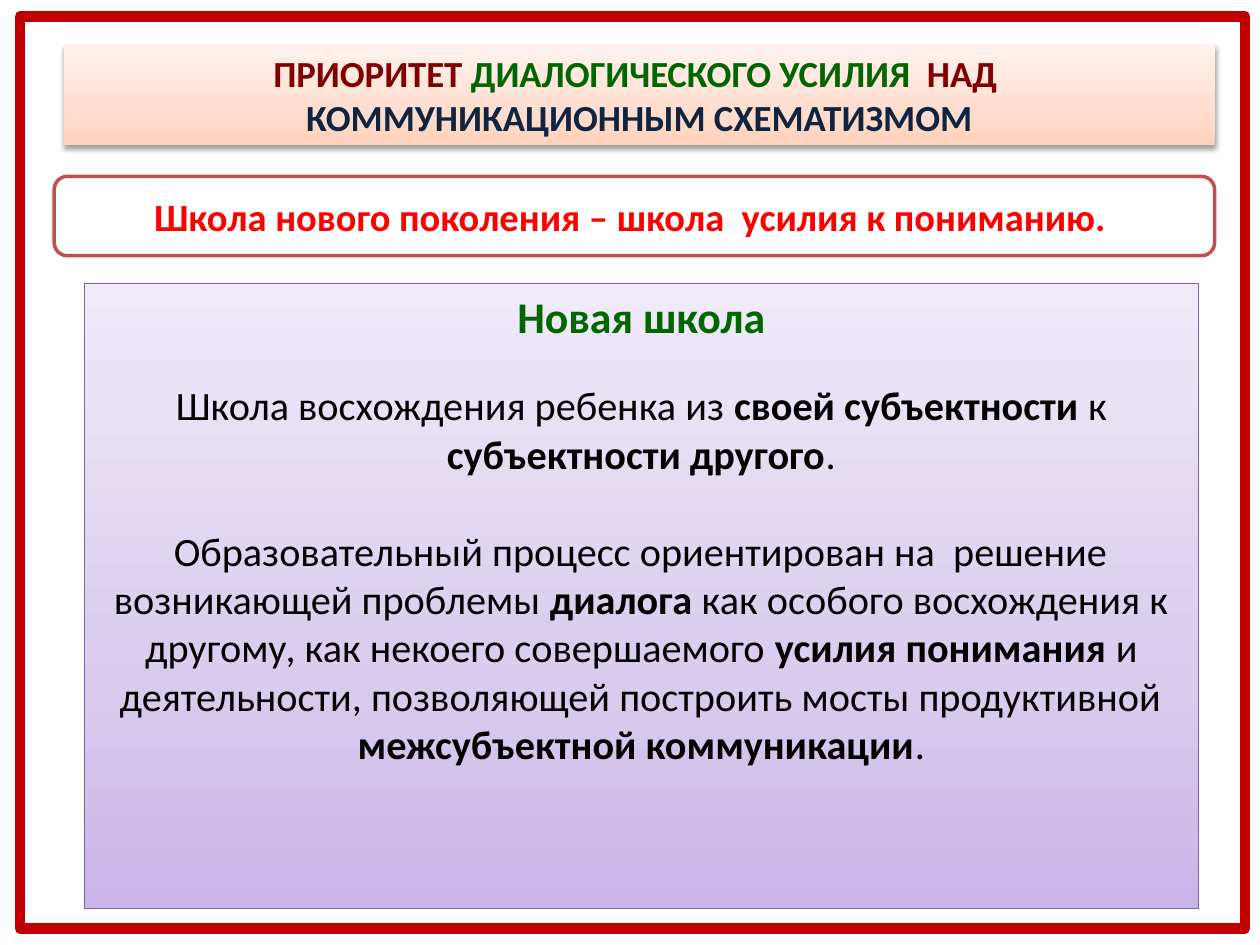
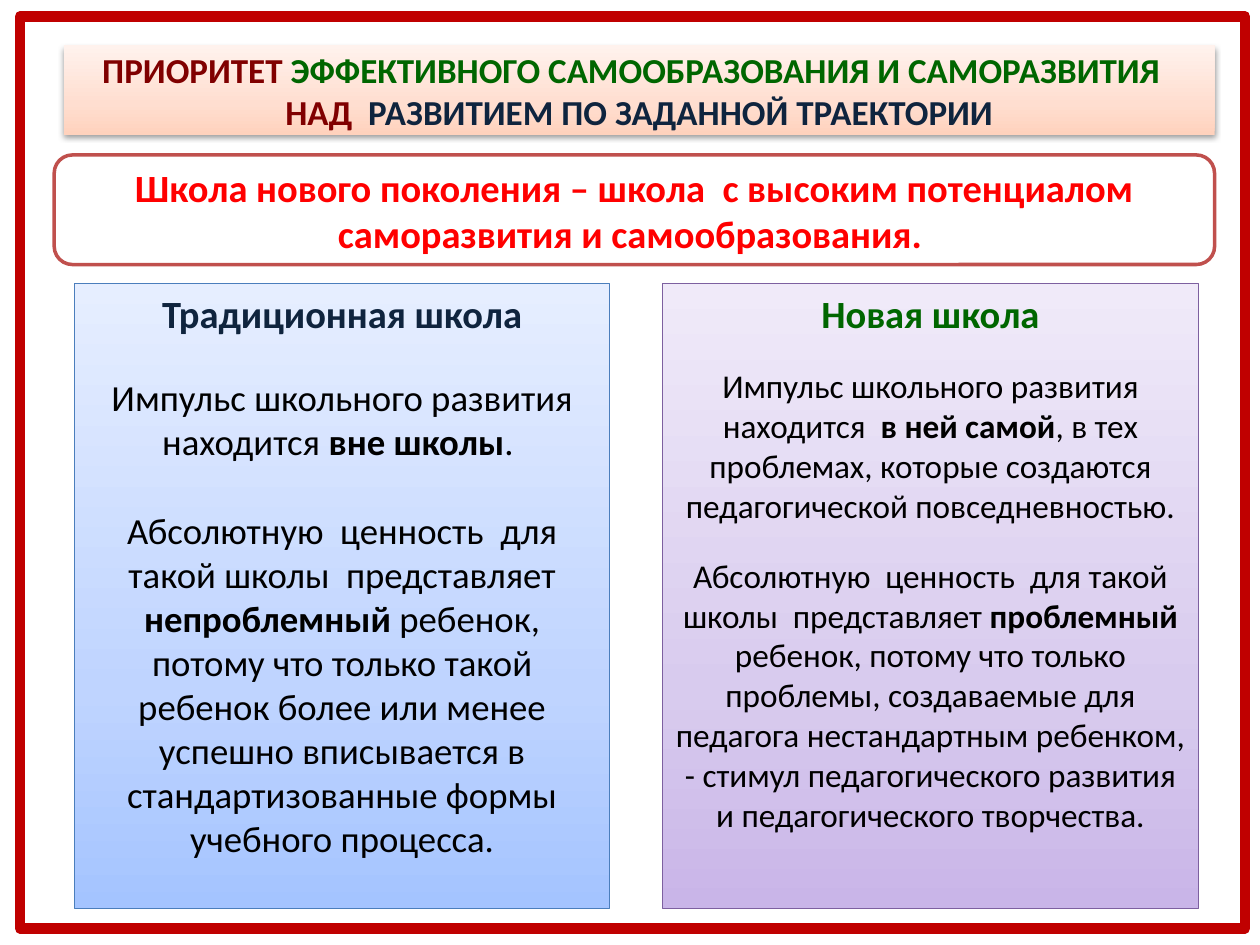
from copy import deepcopy

from lxml.etree import SubElement
from pptx import Presentation
from pptx.dml.color import RGBColor
from pptx.enum.shapes import MSO_SHAPE
from pptx.enum.text import MSO_ANCHOR, PP_ALIGN
from pptx.oxml.ns import qn
from pptx.util import Inches, Pt

FONT = "Calibri"
COLORS = {
    "frame": "C00000", "white": "FFFFFF", "black": "000000",
    "maroon": "800000", "green": "006600", "navy": "0F243E",
    "red": "FF0000", "brick": "C0504D", "violet": "7D60A0", "blue": "4B7EBC",
}
# Gradient colours from the bottom edge to the top one
FADES = {
    "peach": ("FFD2BD", "FFDED0", "FFF2ED"),
    "violet": ("C9B5E8", "D8CBEE", "F0EAF9"),
    "blue": ("A4C4FF", "BFD4FF", "E6EEFF"),
}
STOPS = (0, 0.35, 1)
PANEL_TOP, PANEL_HEIGHT = 2.25, 4.96


def rgb(name):
    return RGBColor.from_string(COLORS[name])


def add_box(slide, box, kind=MSO_SHAPE.RECTANGLE, line=None, width=0.75):
    shape = slide.shapes.add_shape(kind, *map(Inches, box))
    shape.shadow.inherit = False
    shape.fill.background()
    if line:
        shape.line.color.rgb = rgb(line)
        shape.line.width = Pt(width)
    else:
        shape.line.fill.background()
    shape.text_frame.word_wrap = True
    return shape


def fade(shape, name):
    """Fill the shape with a three-stop vertical gradient."""
    fill = shape.fill
    fill.gradient()
    fill.gradient_angle = 90
    stops = shape._element.spPr.find(qn("a:gradFill")).find(qn("a:gsLst"))
    stops.append(deepcopy(stops[-1]))
    for stop, place, color in zip(fill.gradient_stops, STOPS, FADES[name]):
        stop.position = place
        stop.color.rgb = RGBColor.from_string(color)


def drop_shadow(shape):
    effects = shape._element.spPr.find(qn("a:effectLst"))
    outer = SubElement(effects, qn("a:outerShdw"), blurRad="40000",
                       dist="20000", dir="5400000", rotWithShape="0")
    color = SubElement(outer, qn("a:srgbClr"), val=COLORS["black"])
    SubElement(color, qn("a:alpha"), val="38000")


def add_runs(par, runs, size):
    """Write (text, colour, bold) runs into a centred paragraph."""
    par.alignment = PP_ALIGN.CENTER
    for text, color, bold in runs:
        run = par.add_run()
        run.text = text
        font = run.font
        font.name, font.size, font.bold = FONT, Pt(size), bold
        font.color.rgb = rgb(color)


def add_frame(slide):
    add_box(slide, (0.16, 0.13, 9.72, 7.24), line="frame", width=6)


def add_title(slide, parts, size, height):
    band = add_box(slide, (0.51, 0.36, 9.13, height))
    fade(band, "peach")
    drop_shadow(band)
    band.text_frame.vertical_anchor = MSO_ANCHOR.MIDDLE
    tones = ("maroon", "green", "maroon", "navy")
    runs = [(text, tone, True) for text, tone in zip(parts, tones)]
    add_runs(band.text_frame.paragraphs[0], runs, size)


def add_motto(slide, text, top, height):
    motto = add_box(slide, (0.43, top, 9.21, height),
                    MSO_SHAPE.ROUNDED_RECTANGLE, "brick", 2)
    motto.fill.solid()
    motto.fill.fore_color.rgb = rgb("white")
    motto.text_frame.vertical_anchor = MSO_ANCHOR.MIDDLE
    add_runs(motto.text_frame.paragraphs[0], [(text, "red", True)], 22)


def add_panel(slide, left, width, tone, head, body, sizes, gaps):
    """Add a panel; stars in the body enclose bold words.

    head is (text, colour), sizes is (head, body), and gaps holds the
    space before each body paragraph, in points.
    """
    panel = add_box(slide, (left, PANEL_TOP, width, PANEL_HEIGHT), line=tone)
    fade(panel, tone)
    frame = panel.text_frame
    frame.vertical_anchor = MSO_ANCHOR.TOP
    add_runs(frame.paragraphs[0], [(*head, True)], sizes[0])
    for text, gap in zip(body, gaps):
        par = frame.add_paragraph()
        par.space_before = Pt(gap)
        runs = [(part, "black", i % 2 == 1)
                for i, part in enumerate(text.split("*"))]
        add_runs(par, runs, sizes[1])


def add_dialogue(slide):
    add_frame(slide)
    add_title(slide, ("ПРИОРИТЕТ ", "ДИАЛОГИЧЕСКОГО УСИЛИЯ", "  НАД  ",
                      "КОММУНИКАЦИОННЫМ СХЕМАТИЗМОМ"), 21, 0.79)
    add_motto(slide, "Школа нового поколения – школа  усилия к пониманию. ",
              1.4, 0.63)
    add_panel(slide, 0.67, 8.84, "violet", ("Новая школа", "green"), (
        "Школа восхождения ребенка из *своей субъектности *к "
        "*субъектности другого*.",
        "Образовательный процесс ориентирован на  решение возникающей "
        "проблемы *диалога* как особого восхождения к другому, как некоего "
        "совершаемого *усилия понимания *и деятельности, позволяющей "
        "построить мосты продуктивной *межсубъектной коммуникации*.",
    ), (25, 23), (22, 28))


def add_growth(slide):
    add_frame(slide)
    add_title(slide, ("ПРИОРИТЕТ ",
                      "ЭФФЕКТИВНОГО САМООБРАЗОВАНИЯ И САМОРАЗВИТИЯ ",
                      "  НАД ", " РАЗВИТИЕМ ПО ЗАДАННОЙ ТРАЕКТОРИИ"),
              20, 0.71)
    add_motto(slide, "Школа нового поколения – школа  с высоким потенциалом "
              "саморазвития и самообразования. ", 1.23, 0.87)
    add_panel(slide, 0.59, 4.25, "blue", ("Традиционная школа", "navy"), (
        "Импульс школьного развития находится *вне школы*. ",
        "Абсолютную  ценность  для такой школы  представляет "
        "*непроблемный* ребенок, потому что только такой ребенок более или "
        "менее успешно вписывается в стандартизованные формы учебного "
        "процесса.",
    ), (22, 21), (22, 25.6))
    add_panel(slide, 5.26, 4.25, "violet", ("Новая школа", "green"), (
        "Импульс школьного развития находится  *в ней самой*, в тех "
        "проблемах, которые создаются педагогической повседневностью.",
        "Абсолютную  ценность  для такой школы  представляет *проблемный* "
        "ребенок, потому что только проблемы, создаваемые для педагога "
        "нестандартным ребенком, - стимул педагогического развития и "
        "педагогического творчества.",
    ), (22, 19), (17, 17))


def main():
    deck = Presentation()
    deck.slide_width, deck.slide_height = Inches(10), Inches(7.5)
    for build in (add_dialogue, add_growth):
        build(deck.slides.add_slide(deck.slide_layouts[6]))
    deck.save("out.pptx")


if __name__ == "__main__":
    main()
